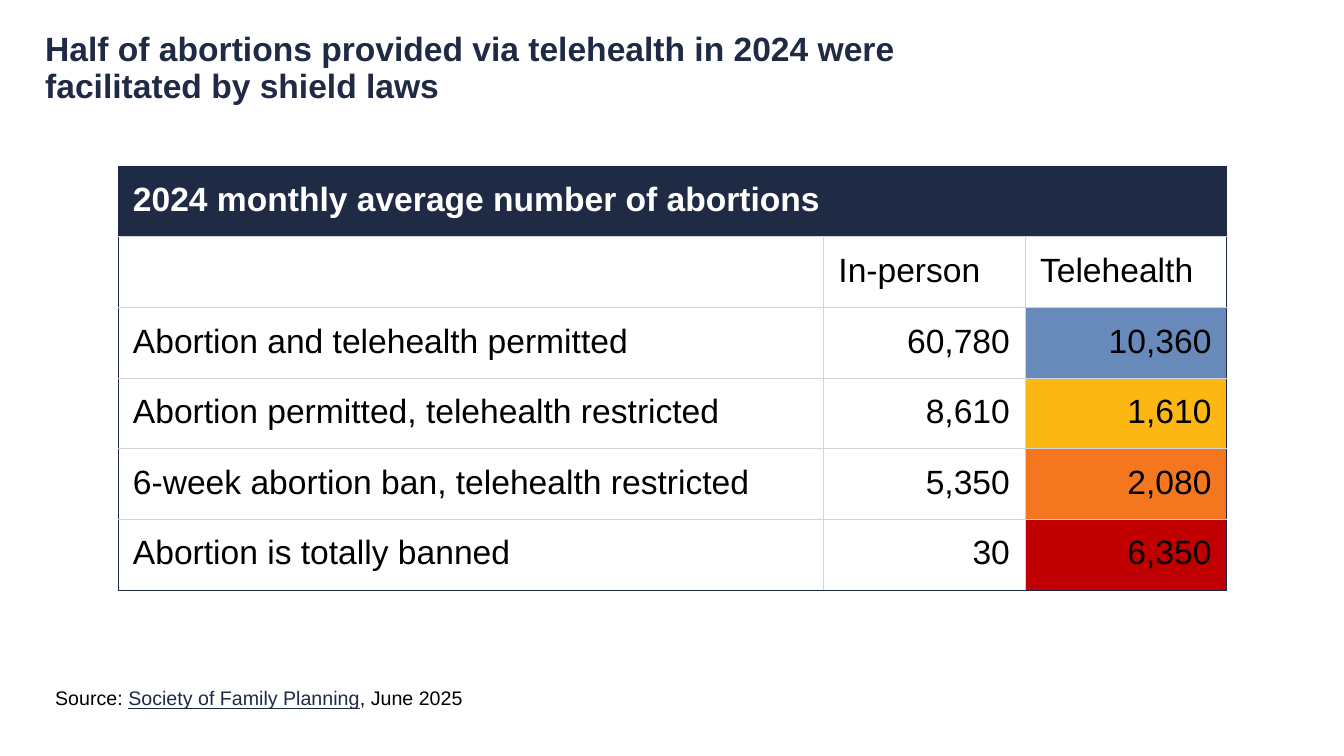
from dataclasses import dataclass

from lxml.etree import SubElement
from pptx import Presentation
from pptx.dml.color import RGBColor
from pptx.enum.text import MSO_ANCHOR, PP_ALIGN
from pptx.oxml import parse_xml
from pptx.oxml.ns import nsdecls, qn
from pptx.util import Cm, Pt


@dataclass(frozen=True)
class Theme:
    font: str = "Arial"
    navy: str = "1F2A44"
    grid: str = "D2D4DA"
    white: str = "FFFFFF"
    black: str = "000000"
    blue: str = "688ABA"
    yellow: str = "FCB713"
    orange: str = "F47720"
    red: str = "C00000"
    large: int = 24
    small: int = 14
    frame_line: float = 0.5
    grid_line: float = 0.75


THEME = Theme()
TITLE = "Half of abortions provided via telehealth in 2024 were facilitated by shield laws"
HEADING = "2024 monthly average number of abortions"
COLUMN_LABELS = ("", "In-person", "Telehealth")
POLICY_ROWS = [
    ("Abortion and telehealth permitted", "60,780", "10,360", THEME.blue),
    ("Abortion permitted, telehealth restricted", "8,610", "1,610", THEME.yellow),
    ("6-week abortion ban, telehealth restricted", "5,350", "2,080", THEME.orange),
    ("Abortion is totally banned", "30", "6,350", THEME.red),
]
COLUMN_WIDTHS = (Cm(17.78), Cm(5.08), Cm(5.08))
ROW_HEIGHT = Cm(1.78)
CELL_MARGIN = Cm(0.38)


def style_font(font, size, color, bold=False):
    font.name = THEME.font
    font.size = Pt(size)
    font.bold = bold
    font.color.rgb = RGBColor.from_string(color)


def add_text_frame(slide, left, top, width, height):
    frame = slide.shapes.add_textbox(left, top, width, height).text_frame
    frame.word_wrap = True
    return frame


def add_title(slide):
    frame = add_text_frame(slide, Cm(1.14), Cm(1.02), Cm(24.69), Cm(1.45))
    frame.margin_left = 0
    frame.vertical_anchor = MSO_ANCHOR.MIDDLE
    frame.text = TITLE
    headline = frame.paragraphs[0]
    headline.line_spacing = 0.9
    style_font(headline.runs[0].font, THEME.large, THEME.navy, bold=True)


def add_source(slide):
    frame = add_text_frame(slide, Cm(1.14), Cm(17.17), Cm(12.95), Cm(0.86))
    citation = frame.paragraphs[0]
    for wording, color, underlined in (
        ("Source: ", THEME.black, False),
        ("Society of Family Planning", THEME.navy, True),
        (", June 2025", THEME.black, False),
    ):
        run = citation.add_run()
        run.text = wording
        style_font(run.font, THEME.small, color)
        run.font.underline = underlined


def set_borders(cell, outer_sides):
    properties = cell._tc.get_or_add_tcPr()
    for position, side in enumerate("LRTB"):
        outer = side in outer_sides
        width = Pt(THEME.frame_line if outer else THEME.grid_line)
        border = parse_xml(f'<a:ln{side} {nsdecls("a")} w="{width}"/>')
        line_fill = SubElement(border, qn("a:solidFill"))
        color = THEME.navy if outer else THEME.grid
        SubElement(line_fill, qn("a:srgbClr"), val=color)
        properties.insert(position, border)


def fill_cell(cell, wording, fill, color=THEME.black, bold=False, align=PP_ALIGN.LEFT):
    cell.margin_left = cell.margin_right = CELL_MARGIN
    cell.margin_top = cell.margin_bottom = CELL_MARGIN
    cell.fill.solid()
    cell.fill.fore_color.rgb = RGBColor.from_string(fill)
    cell.text = wording
    paragraph = cell.text_frame.paragraphs[0]
    paragraph.alignment = align
    style_font(paragraph.font, THEME.large, color, bold)
    for run in paragraph.runs:
        style_font(run.font, THEME.large, color, bold)


def add_abortion_table(slide):
    row_count = len(POLICY_ROWS) + 2
    last_row, last_column = row_count - 1, len(COLUMN_WIDTHS) - 1
    table = slide.shapes.add_table(
        row_count, len(COLUMN_WIDTHS), Cm(2.97), Cm(4.19),
        sum(COLUMN_WIDTHS), ROW_HEIGHT * row_count,
    ).table
    table.first_row = table.horz_banding = False
    for column, width in zip(table.columns, COLUMN_WIDTHS):
        column.width = width
    for row in table.rows:
        row.height = ROW_HEIGHT

    headings = (HEADING, "", "")
    for column, (heading, label) in enumerate(zip(headings, COLUMN_LABELS)):
        fill_cell(table.cell(0, column), heading, THEME.navy, THEME.white, bold=True)
        fill_cell(table.cell(1, column), label, THEME.white)
    for row, (policy, in_person, telehealth, color) in enumerate(POLICY_ROWS, start=2):
        fill_cell(table.cell(row, 0), policy, THEME.white)
        fill_cell(table.cell(row, 1), in_person, THEME.white, align=PP_ALIGN.RIGHT)
        fill_cell(table.cell(row, 2), telehealth, color, align=PP_ALIGN.RIGHT)

    for row in range(row_count):
        for column in range(len(COLUMN_WIDTHS)):
            outer_sides = {
                "L": row == 0 or column == 0,
                "R": row == 0 or column == last_column,
                "T": row == 0,
                "B": row == last_row,
            }
            set_borders(table.cell(row, column), [s for s, on in outer_sides.items() if on])
    table.cell(0, 0).merge(table.cell(0, last_column))


def main():
    deck = Presentation()
    deck.slide_width, deck.slide_height = Cm(33.87), Cm(19.05)
    slide = deck.slides.add_slide(deck.slide_layouts[6])
    add_title(slide)
    add_source(slide)
    add_abortion_table(slide)
    deck.save("out.pptx")


if __name__ == "__main__":
    main()
